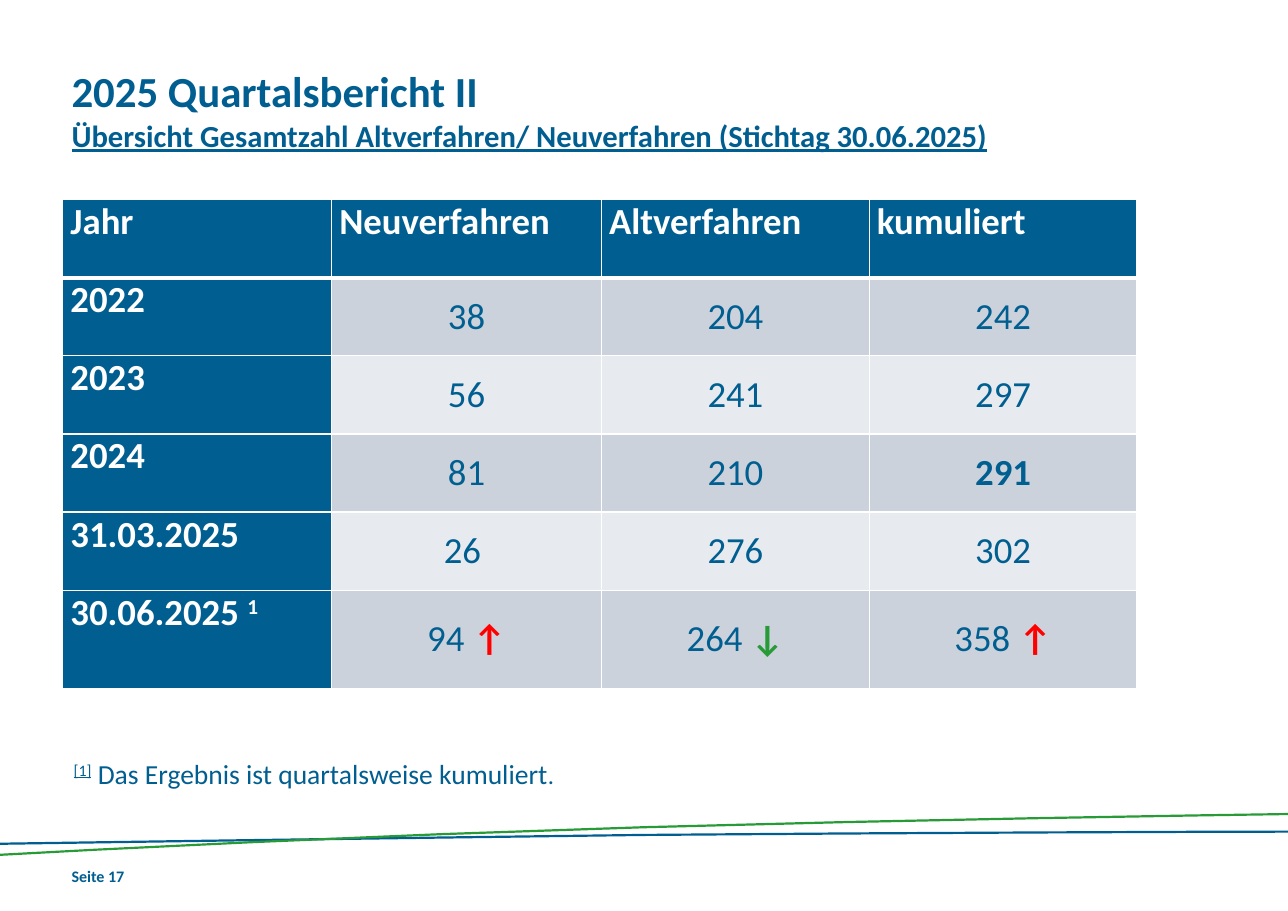
from lxml.etree import SubElement
from pptx import Presentation
from pptx.dml.color import RGBColor
from pptx.enum.text import MSO_ANCHOR, PP_ALIGN
from pptx.oxml.ns import qn
from pptx.util import Inches, Pt

BLUE = RGBColor(0x00, 0x5E, 0x90)
GREEN = RGBColor(0x28, 0x9B, 0x38)
RED = RGBColor(0xFF, 0x00, 0x00)
WHITE = RGBColor(0xFF, 0xFF, 0xFF)
BAND_DARK = RGBColor(0xCC, 0xD2, 0xDB)
BAND_LIGHT = RGBColor(0xE7, 0xEA, 0xEE)

SUPERSCRIPT = "30000"
CURVE_STEPS = 4
WAVE_THICKNESS = 0.02
WAVE_X = [0, 0.7, 3.41, 5.84, 8.25, 10.99, 11.69]
WAVES = [
    (BLUE, [7.65, 7.64, 7.6, 7.57, 7.55, 7.54, 7.54]),
    (GREEN, [7.75, 7.71, 7.57, 7.5, 7.43, 7.39, 7.38]),
]
ROWS = [
    ["Jahr", "Neuverfahren", "Altverfahren", "kumuliert"],
    ["2022", "38", "204", "242"],
    ["2023", "56", "241", "297"],
    ["2024", "81", "210", "291"],
    ["31.03.2025", "26 ", "276", "302"],
    ["30.06.2025 ", "94 ", "264 ", "358 "],
]
TRENDS = [("↑", RED), ("↓", GREEN), ("↑", RED)]


def format_run(run, size, color=BLUE, bold=False, underline=False):
    font = run.font
    font.name, font.size = "Calibri", Pt(size)
    font.bold, font.underline = bold, underline
    font.color.rgb = color


def bezier(a, b, c, d, t):
    """Value of a cubic curve with control values a to d at t from 0 to 1."""
    s = 1 - t
    return a * s**3 + 3 * b * s**2 * t + 3 * c * s * t**2 + d * t**3


presentation = Presentation()
presentation.slide_width = Inches(11.69)
presentation.slide_height = Inches(8.27)
slide = presentation.slides.add_slide(presentation.slide_layouts[6])

# Footer waves: two cubic curves each, drawn as thin closed bands
for color, wave_y in WAVES:
    upper = [(WAVE_X[0], wave_y[0])]
    for first in (0, 3):
        for step in range(1, CURVE_STEPS + 1):
            t = step / CURVE_STEPS
            upper.append((bezier(*WAVE_X[first:first + 4], t),
                          bezier(*wave_y[first:first + 4], t)))
    lower = [(x, y + WAVE_THICKNESS) for x, y in reversed(upper)]
    outline = [(Inches(x), Inches(y)) for x, y in upper + lower]
    builder = slide.shapes.build_freeform(*outline[0])
    builder.add_line_segments(outline[1:], close=True)
    wave = builder.convert_to_shape()
    wave.shadow.inherit = False
    wave.fill.solid()
    wave.fill.fore_color.rgb = color
    wave.line.fill.background()

# Title and page number
texts = [
    ((0.65, 0.59, 10.24, 1.02), "2025 Quartalsbericht II\v"
     "Übersicht Gesamtzahl Altverfahren/ Neuverfahren (Stichtag 30.06.2025)",
     [(28, False), (20, True)]),
    ((0.65, 7.87, 0.71, 0.25), "Seite 17", [(10.5, False)]),
]
for box, text, formats in texts:
    frame = slide.shapes.add_textbox(*map(Inches, box)).text_frame
    frame.margin_left = frame.margin_right = 0
    frame.margin_top = frame.margin_bottom = 0
    frame.word_wrap = len(formats) > 1
    paragraph = frame.paragraphs[0]
    paragraph.text = text
    for run, (size, underline) in zip(paragraph.runs, formats):
        format_run(run, size, bold=True, underline=underline)

# Footnote
footnote = slide.shapes.add_textbox(
    Inches(0.57), Inches(6.82), Inches(11.12), Inches(0.4)).text_frame
footnote.word_wrap = True
footnote.vertical_anchor = MSO_ANCHOR.MIDDLE
paragraph = footnote.paragraphs[0]
for text, size in [("[1]", 18), (" Das Ergebnis ist quartalsweise kumuliert", 18), (".", 16)]:
    run = paragraph.add_run()
    run.text = text
    format_run(run, size, underline=text == "[1]")
    if text == "[1]":
        run.font._element.set("baseline", SUPERSCRIPT)

# Table of cases
table = slide.shapes.add_table(
    len(ROWS), len(ROWS[0]), Inches(0.57), Inches(1.81), Inches(9.75), Inches(4.44)).table
for column, width in zip(table.columns, [2.44, 2.45, 2.43, 2.43]):
    column.width = Inches(width)
for row in table.rows:
    row.height = Inches(0.71)
last_row = len(ROWS) - 1
table.rows[last_row].height = Inches(0.89)

for row_index, values in enumerate(ROWS):
    for column_index, value in enumerate(values):
        cell = table.cell(row_index, column_index)
        is_heading = row_index == 0 or column_index == 0
        cell.margin_left = cell.margin_right = Inches(0.07)
        cell.margin_top = cell.margin_bottom = 0
        cell.vertical_anchor = MSO_ANCHOR.TOP if is_heading else MSO_ANCHOR.MIDDLE

        paragraph = cell.text_frame.paragraphs[0]
        paragraph.text = value
        paragraph.alignment = PP_ALIGN.JUSTIFY if is_heading else PP_ALIGN.CENTER
        paragraph.space_after = Pt(6)
        format_run(paragraph.runs[0], 24, WHITE if is_heading else BLUE,
                   bold=is_heading or value == "291")
        if row_index == last_row:
            mark = paragraph.add_run()
            if is_heading:
                mark.text = "1"
                format_run(mark, 24, WHITE, bold=True)
                mark.font._element.set("baseline", SUPERSCRIPT)
            else:
                mark.text, color = TRENDS[column_index - 1]
                format_run(mark, 24, color, bold=True)

        properties = cell._tc.get_or_add_tcPr()
        for side in ("lnL", "lnR", "lnT", "lnB"):
            below_header = (row_index, side) in [(0, "lnB"), (1, "lnT")]
            border = SubElement(properties, qn(f"a:{side}"), w=str(Pt(3 if below_header else 1)))
            fill = SubElement(border, qn("a:solidFill"))
            SubElement(fill, qn("a:srgbClr"), val=str(WHITE))
        cell.fill.solid()
        band = BAND_DARK if row_index % 2 or row_index == last_row else BAND_LIGHT
        cell.fill.fore_color.rgb = BLUE if is_heading else band

presentation.save("out.pptx")
